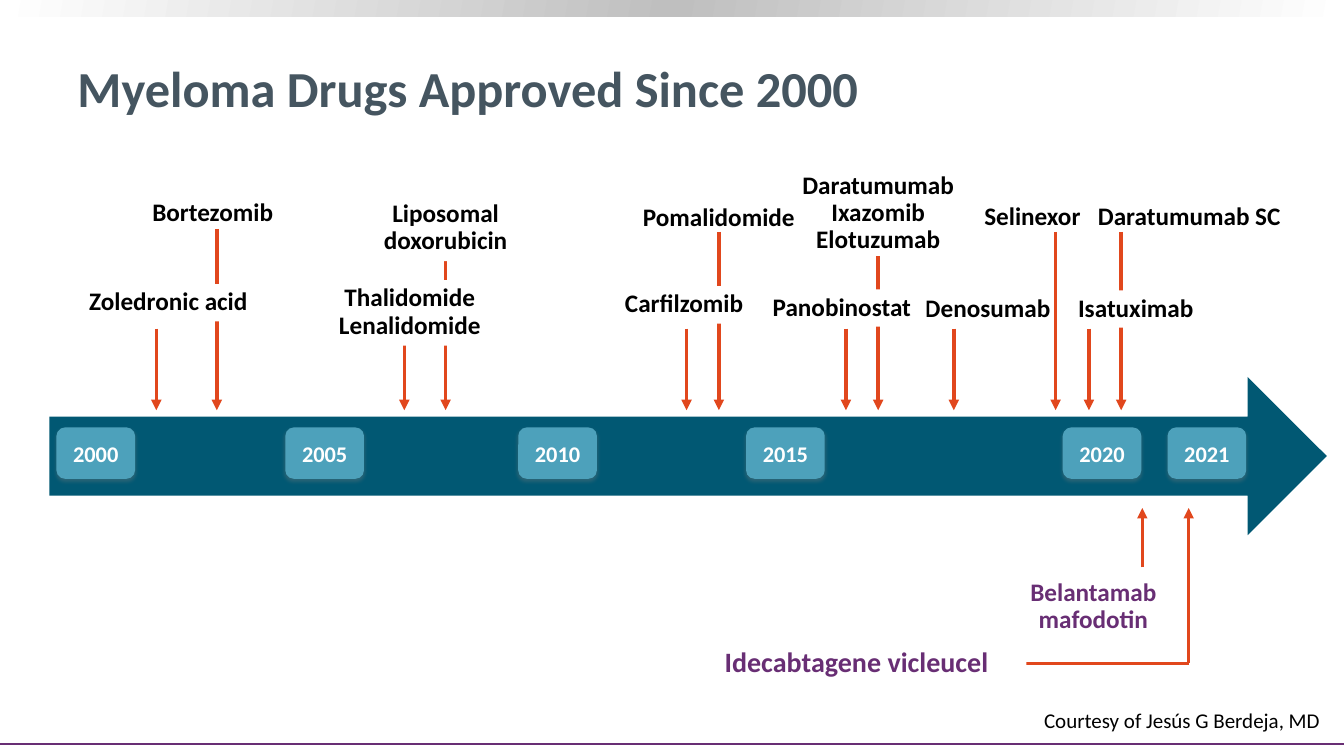
from lxml.etree import SubElement
from pptx import Presentation
from pptx.dml.color import RGBColor
from pptx.enum.shapes import MSO_CONNECTOR, MSO_SHAPE
from pptx.enum.text import MSO_ANCHOR, PP_ALIGN
from pptx.oxml.ns import qn
from pptx.util import Pt

PX = 9144  # 100 px to the inch
FONT = "Calibri"
WHITE, BLACK, SLATE = "FFFFFF", "000000", "455560"
TEAL, SKY, ORANGE, PURPLE = "015873", "4DA1BB", "E1471D", "682E74"

BAND_TOP, BADGE_TOP, ARROW_TIP = 374, 424, 407
LOWER_TIP, ELBOW_Y, ELBOW_X = 504, 658, 1179

# year, left edge
YEARS = [("2000", 56), ("2005", 283), ("2010", 514), ("2015", 740),
         ("2020", 1054), ("2021", 1158)]

# x, top of each arrow pointing down at the band
APPROVALS = [(155, 326), (215, 227), (401, 317), (442, 257), (681, 326),
             (713, 230), (839, 326), (871, 254), (946, 326), (1047, 230),
             (1080, 326), (1112, 230)]

# text, left, top, width, height
OPEN_LABELS = [
    ("Bortezomib", 111, 193, 200, 37),
    ("Denosumab", 904, 288, 151, 37),
    ("Pomalidomide", 613, 198, 200, 37),
    ("Daratumumab\nIxazomib\nElotuzumab", 771, 166, 200, 92),
    ("Selinexor", 924, 197, 200, 37),
    ("Daratumumab SC", 1072, 197, 215, 37),
]
# These labels hide the arrow that runs behind them
FILLED_LABELS = [
    ("Zoledronic acid", 67, 282, 200, 37),
    ("Liposomal doxorubicin", 342, 194, 200, 65),
    ("Thalidomide\vLenalidomide", 321, 278, 171, 65),
    ("Carfilzomib", 592, 284, 173, 37),
    ("Panobinostat", 751, 287, 168, 37),
    ("Isatuximab", 1051, 288, 151, 37),
]


def color(code):
    return RGBColor.from_string(code)


def place(*lengths):
    return [length * PX for length in lengths]


def write(shape, text, size, code, bold=True, align=PP_ALIGN.CENTER, spacing=None):
    frame = shape.text_frame
    frame.word_wrap = True
    frame.text = text
    for para in frame.paragraphs:
        para.alignment = align
        if spacing:
            para.line_spacing = spacing
        for span in para.runs:
            span.font.name = FONT
            span.font.size = Pt(size)
            span.font.bold = bold
            span.font.color.rgb = color(code)


def add_solid(page, kind, box, code):
    shape = page.shapes.add_shape(kind, *place(*box))
    shape.shadow.inherit = False
    shape.fill.solid()
    shape.fill.fore_color.rgb = color(code)
    shape.line.fill.background()
    return shape


def add_top_strip(page):
    strip = add_solid(page, MSO_SHAPE.RECTANGLE, (0, 0, 1333, 16), WHITE)
    strip.fill.gradient()
    stops = strip.fill._fill._gradFill.find(qn("a:gsLst"))
    for stop in list(stops):
        stops.remove(stop)
    for position, code in ((0, WHITE), (50000, "BFBFBF"), (100000, WHITE)):
        stop = SubElement(stops, qn("a:gs"), pos=str(position))
        SubElement(stop, qn("a:srgbClr"), val=code)
    strip.fill.gradient_angle = 170


def add_line(page, start, end, code=ORANGE, width=2.5, arrow=False):
    line = page.shapes.add_connector(MSO_CONNECTOR.STRAIGHT, *place(*start, *end))
    line.line.color.rgb = color(code)
    line.line.width = Pt(width)
    if arrow:
        SubElement(line.line._get_or_add_ln(), qn("a:tailEnd"), type="triangle")
    SubElement(line._element.spPr, qn("a:effectLst"))


def add_text(page, text, box, size, code, fill=None, **style):
    label = page.shapes.add_textbox(*place(*box))
    if fill:
        label.fill.solid()
        label.fill.fore_color.rgb = color(fill)
    write(label, text, size, code, **style)
    return label


def add_label(page, text, box, code=BLACK, size=18, fill=None):
    add_text(page, text, box, size, code, fill, spacing=0.9)


def add_year(page, year, left):
    badge = add_solid(page, MSO_SHAPE.ROUNDED_RECTANGLE, (left, BADGE_TOP, 78, 51), SKY)
    effects = badge._element.spPr.find(qn("a:effectLst"))
    shadow = SubElement(effects, qn("a:outerShdw"), blurRad=str(Pt(3.1)),
                        dist=str(Pt(1.8)), dir="5400000", rotWithShape="0")
    tint = SubElement(shadow, qn("a:srgbClr"), val="808080")
    SubElement(tint, qn("a:alpha"), val="35000")
    frame = badge.text_frame
    frame.margin_left = frame.margin_right = 5 * PX
    frame.margin_top = frame.margin_bottom = 5 * PX
    frame.vertical_anchor = MSO_ANCHOR.MIDDLE
    write(badge, year, 16, WHITE)


def main():
    deck = Presentation()
    deck.slide_width, deck.slide_height = place(1333, 750)
    page = deck.slides.add_slide(deck.slide_layouts[6])

    add_top_strip(page)
    add_line(page, (0, 738), (1333, 738), PURPLE, 1.5)
    title = add_text(page, "Myeloma Drugs Approved Since 2000", (67, 26, 1189, 121),
                     36, SLATE, align=PP_ALIGN.LEFT)
    title.text_frame.vertical_anchor = MSO_ANCHOR.MIDDLE

    add_solid(page, MSO_SHAPE.RIGHT_ARROW, (49, BAND_TOP, 1267, 157), TEAL)
    for year, left in YEARS:
        add_year(page, year, left)

    for x, top in APPROVALS:
        add_line(page, (x, top), (x, ARROW_TIP), arrow=True)
    add_line(page, (1133, 563), (1133, LOWER_TIP), arrow=True)
    add_line(page, (ELBOW_X, ELBOW_Y), (ELBOW_X, LOWER_TIP), arrow=True)
    add_line(page, (883, ELBOW_Y), (ELBOW_X, ELBOW_Y))

    for text, *box in OPEN_LABELS:
        add_label(page, text, box)
    for text, *box in FILLED_LABELS:
        add_label(page, text, box, fill=WHITE)
    add_label(page, "Belantamab mafodotin", (1003, 570, 163, 65), PURPLE, fill=WHITE)
    add_label(page, "Idecabtagene vicleucel", (681, 638, 337, 40), PURPLE, 20, WHITE)
    add_text(page, "Courtesy of Jesús G Berdeja, MD", (971, 697, 348, 35),
             15, BLACK, bold=False, align=PP_ALIGN.RIGHT)

    deck.save("out.pptx")


if __name__ == "__main__":
    main()
